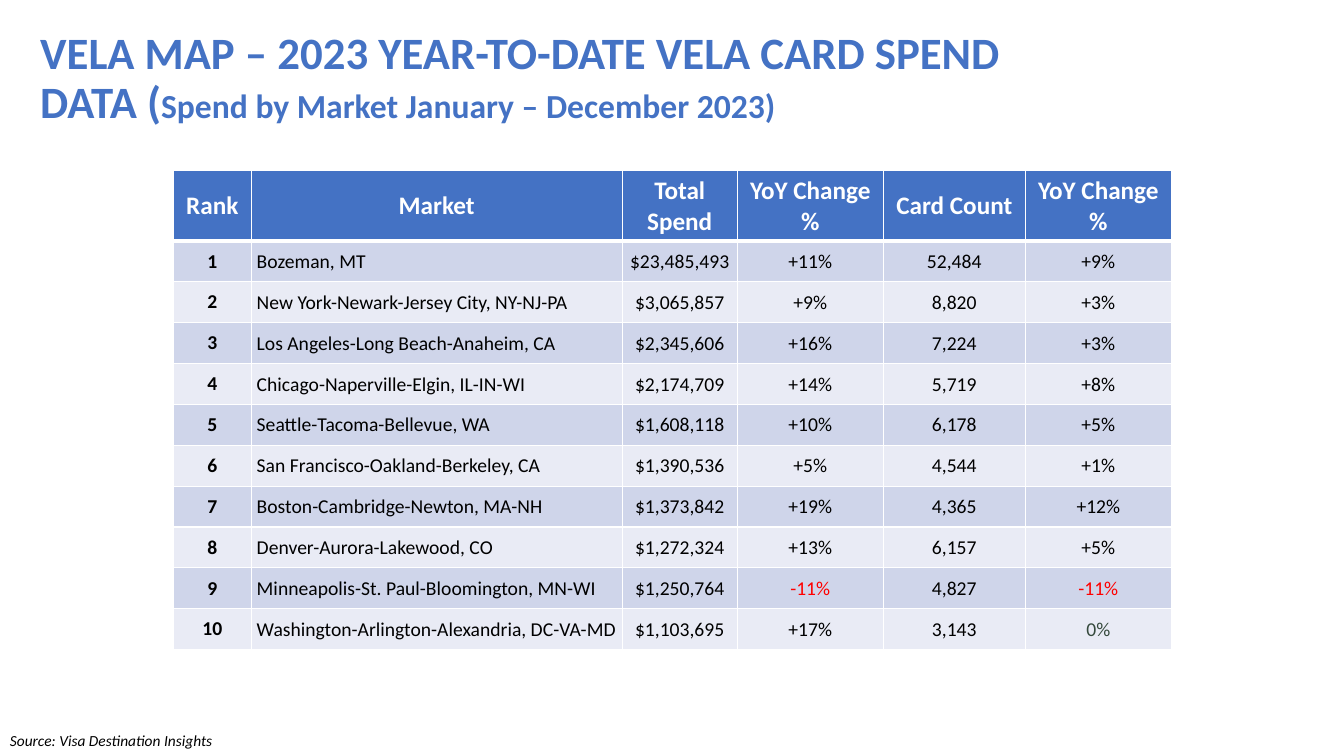
from lxml.etree import SubElement
from pptx import Presentation
from pptx.dml.color import RGBColor
from pptx.enum.text import MSO_ANCHOR, MSO_AUTO_SIZE, PP_ALIGN
from pptx.oxml.ns import qn
from pptx.util import Cm, Pt

FONT = "Calibri"
COLORS = {
    "blue": "4472C4",
    "white": "FFFFFF",
    "black": "000000",
    "red": "FF0000",
    "gray": "364A3D",
    "odd_row": "CFD5EA",
    "even_row": "E9EBF5",
}
COLUMN_WIDTHS = [1.96, 9.35, 2.9, 3.68, 3.58, 3.68]
HEADER_HEIGHT = 1.77
ROW_HEIGHT = 1.03
HEADINGS = ["Rank", "Market", "Total Spend", "YoY Change %", "Card Count", "YoY Change %"]
MARKETS = [
    ("Bozeman, MT", "$23,485,493", "+11%", "52,484", "+9%"),
    ("New York-Newark-Jersey City, NY-NJ-PA", "$3,065,857", "+9%", "8,820", "+3%"),
    ("Los Angeles-Long Beach-Anaheim, CA", "$2,345,606", "+16%", "7,224", "+3%"),
    ("Chicago-Naperville-Elgin, IL-IN-WI", "$2,174,709", "+14%", "5,719", "+8%"),
    ("Seattle-Tacoma-Bellevue, WA", "$1,608,118", "+10%", "6,178", "+5%"),
    ("San Francisco-Oakland-Berkeley, CA", "$1,390,536", "+5%", "4,544", "+1%"),
    ("Boston-Cambridge-Newton, MA-NH", "$1,373,842", "+19%", "4,365", "+12%"),
    ("Denver-Aurora-Lakewood, CO", "$1,272,324", "+13%", "6,157", "+5%"),
    ("Minneapolis-St. Paul-Bloomington, MN-WI", "$1,250,764", "-11%", "4,827", "-11%"),
    ("Washington-Arlington-Alexandria, DC-VA-MD", "$1,103,695", "+17%", "3,143", "0%"),
]


def rgb(name):
    return RGBColor.from_string(COLORS[name])


def format_run(run, size, color, bold=False, italic=False):
    run.font.name = FONT
    run.font.size = Pt(size)
    run.font.color.rgb = rgb(color)
    run.font.bold = bold
    run.font.italic = italic


def place(shape, left, top, width, height):
    shape.left, shape.top = Cm(left), Cm(top)
    shape.width, shape.height = Cm(width), Cm(height)


def add_title(slide, parts):
    title = slide.shapes.title
    place(title, 0.76, 0.91, 25.4, 2.18)
    frame = title.text_frame
    frame.auto_size = MSO_AUTO_SIZE.NONE
    frame.word_wrap = True
    frame.vertical_anchor = MSO_ANCHOR.MIDDLE
    heading = frame.paragraphs[0]
    heading.alignment = PP_ALIGN.LEFT
    heading.line_spacing = 0.9
    for text, size in parts:
        run = heading.add_run()
        run.text = text
        format_run(run, size, "blue", bold=True)


def add_source(slide, text):
    source = slide.shapes.add_textbox(Cm(0), Cm(18.29), Cm(16.94), Cm(0.74))
    source.text_frame.word_wrap = True
    source.text_frame.text = text
    format_run(source.text_frame.paragraphs[0].runs[0], 11, "black", italic=True)


def set_borders(cell, top=1, bottom=1):
    properties = cell._tc.get_or_add_tcPr()
    for side, points in (("L", 1), ("R", 1), ("T", top), ("B", bottom)):
        line = SubElement(properties, qn(f"a:ln{side}"), w=str(Pt(points)))
        fill = SubElement(line, qn("a:solidFill"))
        SubElement(fill, qn("a:srgbClr"), val=COLORS["white"])


def fill_cell(cell, text, fill, size, color, bold, centered=True):
    cell.text = text
    cell.vertical_anchor = MSO_ANCHOR.MIDDLE
    cell.fill.solid()
    cell.fill.fore_color.rgb = rgb(fill)
    paragraph = cell.text_frame.paragraphs[0]
    paragraph.alignment = PP_ALIGN.CENTER if centered else PP_ALIGN.LEFT
    format_run(paragraph.runs[0], size, color, bold)


def value_color(value):
    if value.startswith("-"):
        return "red"
    return "gray" if value == "0%" else "black"


def add_market_table(slide):
    height = HEADER_HEIGHT + ROW_HEIGHT * len(MARKETS)
    table = slide.shapes.add_table(
        len(MARKETS) + 1, len(HEADINGS),
        Cm(4.37), Cm(4.29), Cm(sum(COLUMN_WIDTHS)), Cm(height),
    ).table
    for column, width in zip(table.columns, COLUMN_WIDTHS):
        column.width = Cm(width)
    for row in table.rows:
        row.height = Cm(ROW_HEIGHT)
    table.rows[0].height = Cm(HEADER_HEIGHT)

    for cell, heading in zip(table.rows[0].cells, HEADINGS):
        set_borders(cell, bottom=3)
        fill_cell(cell, heading, "blue", 18, "white", bold=True)

    for rank, market in enumerate(MARKETS, start=1):
        band = "odd_row" if rank % 2 else "even_row"
        for index, value in enumerate((str(rank), *market)):
            cell = table.cell(rank, index)
            set_borders(cell, top=3 if rank == 1 else 1)
            if index > 0:
                cell.margin_left = Cm(0.14 if index == 1 else 0.02)
                cell.margin_right = cell.margin_top = Cm(0.02)
                cell.margin_bottom = Cm(0)
            fill_cell(cell, value, band, 14, value_color(value),
                      bold=index == 0, centered=index != 1)


def main():
    presentation = Presentation()
    presentation.slide_width = Cm(33.87)
    presentation.slide_height = Cm(19.05)
    slide = presentation.slides.add_slide(presentation.slide_layouts[5])
    add_title(slide, [
        ("VELA MAP – 2023 YEAR-TO-DATE VELA CARD SPEND DATA (", 32),
        ("Spend by Market January – December 2023)", 24),
    ])
    add_source(slide, "Source: Visa Destination Insights")
    add_market_table(slide)
    presentation.save("out.pptx")


if __name__ == "__main__":
    main()
